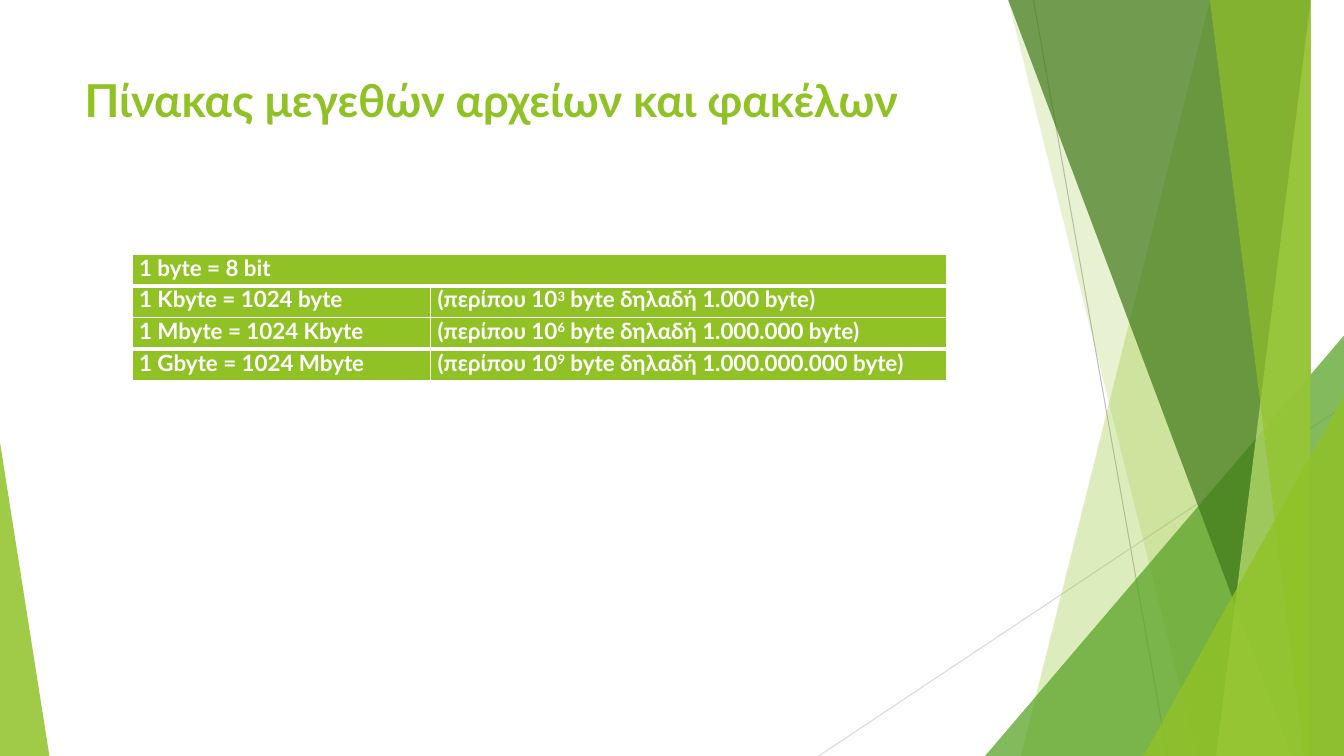
from dataclasses import dataclass

from lxml import etree
from pptx import Presentation
from pptx.dml import color
from pptx.enum import shapes, text
from pptx.oxml import ns
from pptx.util import Inches, Pt

WIDTH, HEIGHT = 13.33, 7.5


@dataclass(frozen=True)
class Theme:
    font: str = "Lato"
    lime: str = "90C226"
    pale_lime: str = "C0E474"
    green: str = "54A021"
    dark_green: str = "3F7819"
    white: str = "FFFFFF"
    grey: str = "BFBFBF"
    light_grey: str = "D9D9D9"
    title_size: float = 32.4
    table_size: float = 16
    hairline: float = 0.75
    thin_border: float = 1
    thick_border: float = 3


THEME = Theme()


@dataclass(frozen=True)
class Ray:
    start: tuple[float, float]
    end: tuple[float, float]
    colour: str


@dataclass(frozen=True)
class Band:
    """Area from a slanted left edge to the right side of the slide."""
    top_x: float
    bottom_x: float
    colour: str
    opacity: int


@dataclass(frozen=True)
class Wedge:
    """Triangle on the bottom edge; apex is 0 for left, 1 for right."""
    left: float
    top: float
    width: float
    apex: float
    colour: str
    opacity: int


@dataclass(frozen=True)
class SizeRow:
    equality: str
    exponent: str = ""
    rounded: str = ""


DECORATION = [
    Ray((10.25, 0), (11.58, HEIGHT), THEME.grey),
    Ray((WIDTH, 4.03), (8.12, HEIGHT), THEME.light_grey),
    Band(12.28, 10.04, THEME.lime, 30),
    Band(10.5, 11.83, THEME.lime, 20),
    Wedge(9.77, 3.33, 3.56, 1, THEME.green, 72),
    Band(10.21, 12.91, THEME.dark_green, 70),
    Band(13.03, 11.92, THEME.pale_lime, 70),
    Band(11.96, 13.18, THEME.lime, 65),
    Wedge(11.34, 3.93, 1.99, 1, THEME.lime, 80),
    Wedge(0, 4.39, 0.49, 0, THEME.lime, 85),
]

SIZES = [
    SizeRow("1 byte = 8 bit"),
    SizeRow("1 Kbyte = 1024 byte", "3", "1.000"),
    SizeRow("1 Mbyte = 1024 Kbyte", "6", "1.000.000"),
    SizeRow("1 Gbyte = 1024 Mbyte", "9", "1.000.000.000"),
]
COLUMN_WIDTHS = [2.96, 5.12]
ROW_HEIGHT = 0.315


def rgb(colour: str) -> color.RGBColor:
    return color.RGBColor.from_string(colour)


def set_font(paragraph, size: float, colour: str) -> None:
    font = paragraph.font
    font.name, font.size, font.bold = THEME.font, Pt(size), True
    font.color.rgb = rgb(colour)


def paint(shape, colour: str, opacity: int) -> None:
    shape.shadow.inherit = False
    shape.line.fill.background()
    shape.fill.solid()
    shape.fill.fore_color.rgb = rgb(colour)
    tint = shape._element.spPr.find(f".//{ns.qn('a:srgbClr')}")
    etree.SubElement(tint, ns.qn("a:alpha"), val=str(opacity * 1000))


def draw_ray(slide, ray: Ray) -> None:
    line = slide.shapes.add_connector(
        shapes.MSO_CONNECTOR.STRAIGHT, *map(Inches, ray.start + ray.end))
    line.line.color.rgb = rgb(ray.colour)
    line.line.width = Pt(THEME.hairline)
    etree.SubElement(line._element.spPr, ns.qn("a:effectLst"))


def draw_band(slide, band: Band) -> None:
    outline = slide.shapes.build_freeform(band.top_x, 0, scale=Inches(1))
    outline.add_line_segments(
        [(WIDTH, 0), (WIDTH, HEIGHT), (band.bottom_x, HEIGHT)], close=True)
    paint(outline.convert_to_shape(), band.colour, band.opacity)


def draw_wedge(slide, wedge: Wedge) -> None:
    triangle = slide.shapes.add_shape(
        shapes.MSO_SHAPE.ISOSCELES_TRIANGLE, Inches(wedge.left), Inches(wedge.top),
        Inches(wedge.width), Inches(HEIGHT - wedge.top))
    triangle.adjustments[0] = wedge.apex
    paint(triangle, wedge.colour, wedge.opacity)


def draw_title(slide, wording: str) -> None:
    title = slide.shapes.add_textbox(Inches(0.74), Inches(0.67), Inches(9.4), Inches(1.44))
    title.text_frame.word_wrap = True
    title.text_frame.vertical_anchor = text.MSO_ANCHOR.TOP
    title.text_frame.text = wording
    set_font(title.text_frame.paragraphs[0], THEME.title_size, THEME.lime)


def add_borders(cell, top: float, bottom: float) -> None:
    """Must run before the fill is set, as the schema puts borders first."""
    widths = {"a:lnL": THEME.thin_border, "a:lnR": THEME.thin_border,
              "a:lnT": top, "a:lnB": bottom}
    properties = cell._tc.get_or_add_tcPr()
    for side, width in widths.items():
        border = etree.SubElement(properties, ns.qn(side), w=str(Pt(width)))
        fill = etree.SubElement(border, ns.qn("a:solidFill"))
        etree.SubElement(fill, ns.qn("a:srgbClr"), val=THEME.white)


def style_cell(cell, top: float, bottom: float) -> None:
    add_borders(cell, top, bottom)
    cell.fill.solid()
    cell.fill.fore_color.rgb = rgb(THEME.lime)
    cell.margin_left = cell.margin_right = Inches(0.07)
    cell.margin_top = cell.margin_bottom = 0
    paragraph = cell.text_frame.paragraphs[0]
    paragraph.alignment = text.PP_ALIGN.JUSTIFY
    set_font(paragraph, THEME.table_size, THEME.white)


def write_approximation(cell, size: SizeRow) -> None:
    paragraph = cell.text_frame.paragraphs[0]
    paragraph.add_run().text = "(περίπου 10"
    exponent = paragraph.add_run()
    exponent.text = size.exponent
    exponent._r.get_or_add_rPr().set("baseline", "30000")
    paragraph.add_run().text = f" byte δηλαδή {size.rounded} byte)"


def draw_size_table(slide) -> None:
    table = slide.shapes.add_table(
        len(SIZES), len(COLUMN_WIDTHS), Inches(1.31), Inches(2.52),
        Inches(sum(COLUMN_WIDTHS)), Inches(ROW_HEIGHT * len(SIZES))).table
    for column, width in zip(table.columns, COLUMN_WIDTHS):
        column.width = Inches(width)
    # Thick rules set off the first and the last row.
    thin, thick = THEME.thin_border, THEME.thick_border
    rules = [thin, thick, thin, thick, thin]
    for index, size in enumerate(SIZES):
        equality, approximation = table.rows[index].cells
        equality.text = size.equality
        if size.exponent:
            write_approximation(approximation, size)
        for cell in (equality, approximation):
            style_cell(cell, rules[index], rules[index + 1])
    table.cell(0, 0).merge(table.cell(0, 1))


def main() -> None:
    deck = Presentation()
    deck.slide_width, deck.slide_height = Inches(WIDTH), Inches(HEIGHT)
    slide = deck.slides.add_slide(deck.slide_layouts[6])
    painters = {Ray: draw_ray, Band: draw_band, Wedge: draw_wedge}
    for part in DECORATION:
        painters[type(part)](slide, part)
    draw_title(slide, "Πίνακας μεγεθών αρχείων και φακέλων")
    draw_size_table(slide)
    deck.save("out.pptx")


if __name__ == "__main__":
    main()
